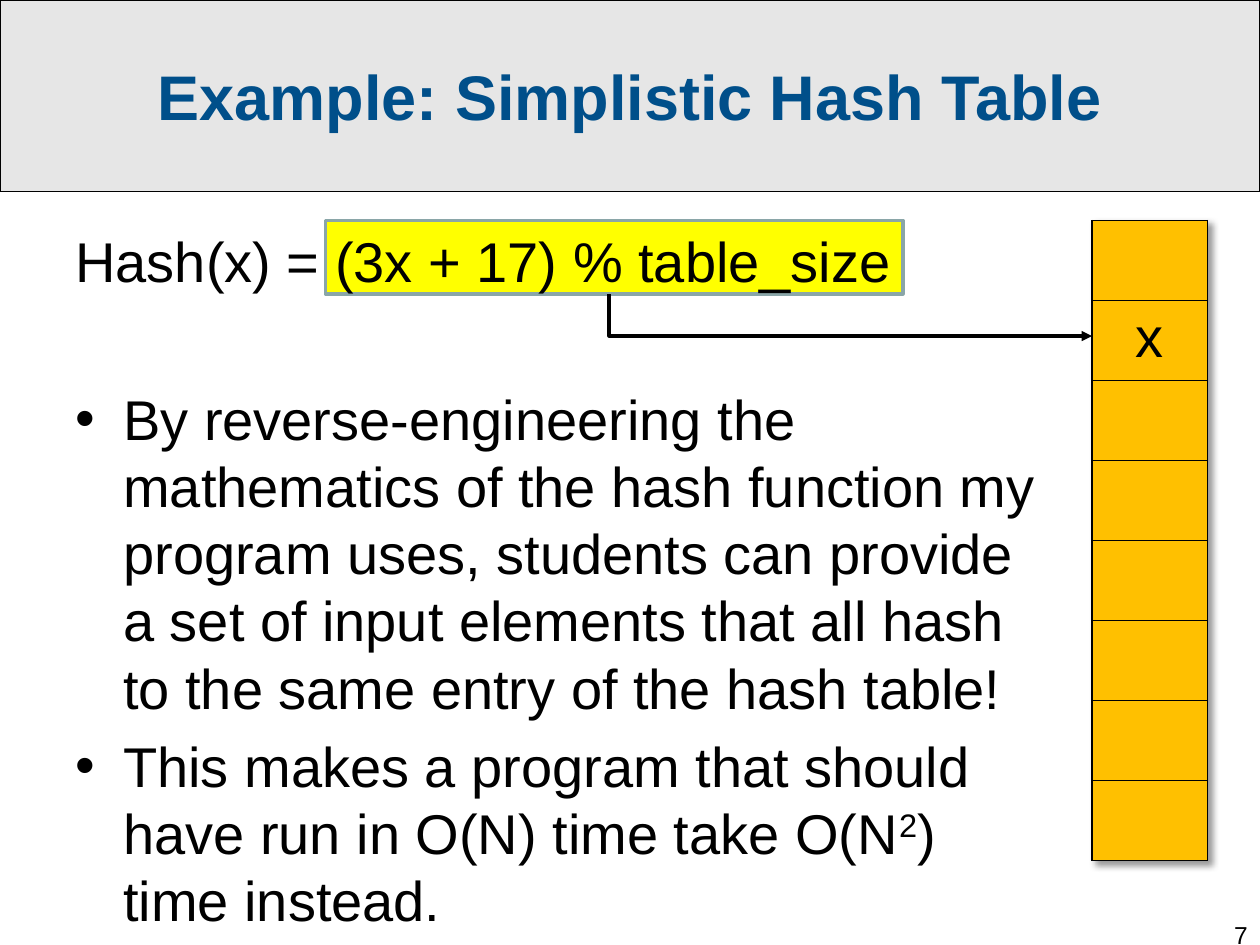
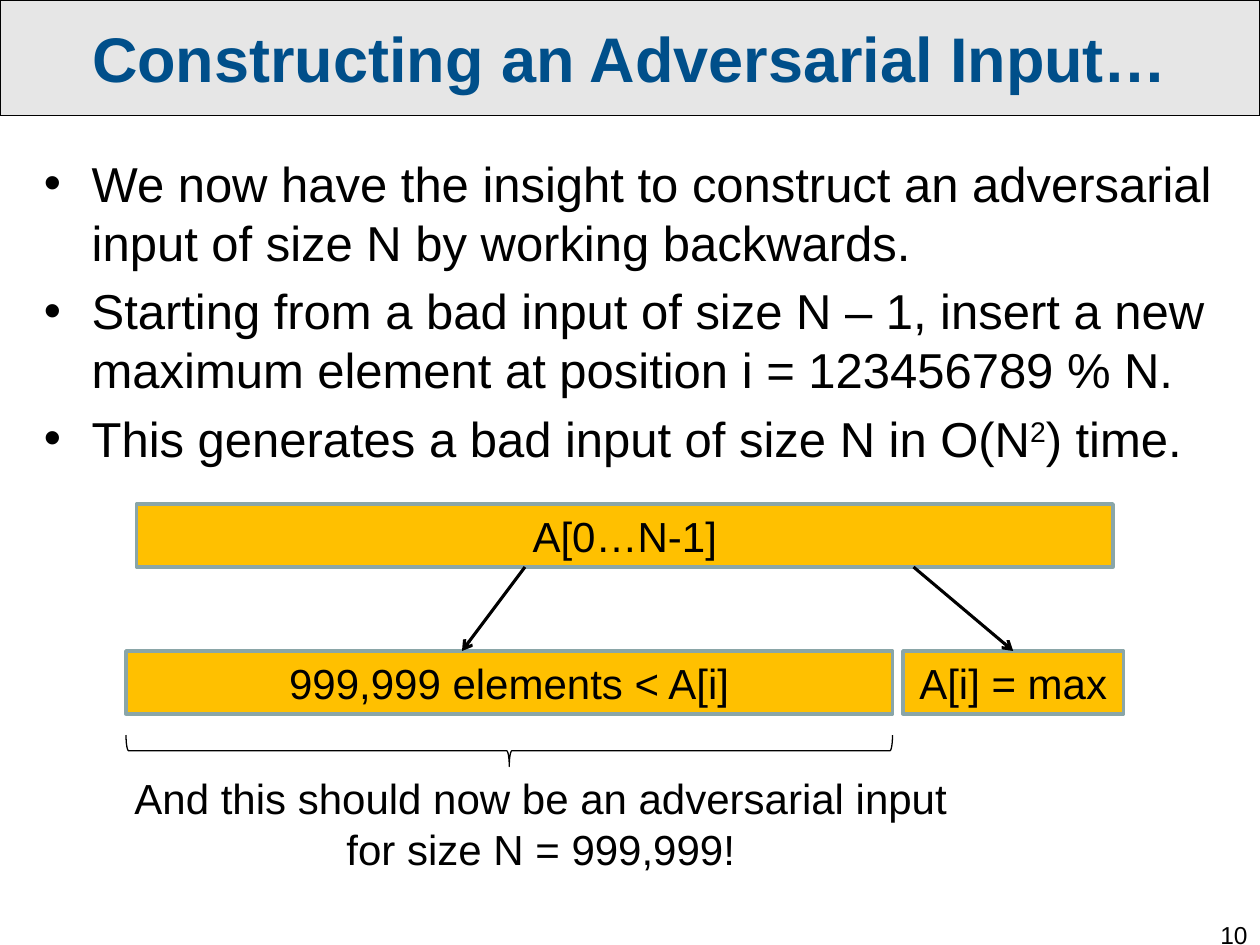
from dataclasses import dataclass

from lxml.etree import SubElement
from pptx import Presentation
from pptx.dml.color import RGBColor
from pptx.enum.shapes import MSO_CONNECTOR, MSO_SHAPE
from pptx.enum.text import MSO_ANCHOR, PP_ALIGN
from pptx.oxml import parse_xml
from pptx.oxml.ns import nsdecls, qn
from pptx.util import Inches, Pt

COLS, ROWS = 120, 90
WIDTH, HEIGHT = Inches(10), Inches(7.5)


@dataclass(frozen=True)
class Theme:
    font: str = "Arial"
    ink: str = "000000"
    title: str = "004F8A"
    band: str = "E6E6E6"
    cell: str = "FFC000"
    mark: str = "FFFF00"
    edge: str = "8AA6A8"
    head: int = 36
    large: int = 32
    body: int = 28
    label: int = 24
    small: int = 14
    thin: float = 0.75
    rule: float = 1
    arrow: float = 1.75
    frame: float = 2
    indent: float = 0.38


THEME = Theme()


def grid(*spans):
    """Turn columns and rows, in turn, into lengths."""
    return [int(span * (HEIGHT / ROWS if i % 2 else WIDTH / COLS))
            for i, span in enumerate(spans)]


def colour(code):
    return RGBColor.from_string(code)


def write(frame, *lines, size, ink=THEME.ink, bold=False, align=PP_ALIGN.LEFT,
          anchor=MSO_ANCHOR.TOP, wrap=True, before=0, bullet=False):
    """Set one paragraph per line; text between two ^ is raised."""
    frame.word_wrap = wrap
    frame.vertical_anchor = anchor
    for i, line in enumerate(lines):
        para = frame.add_paragraph() if i else frame.paragraphs[0]
        para.alignment = align
        para.space_before = Pt(before * size)
        if bullet:
            props = para._p.get_or_add_pPr()
            props.set("marL", str(Inches(THEME.indent)))
            props.set("indent", str(-Inches(THEME.indent)))
            SubElement(props, qn("a:buFont"), typeface=THEME.font)
            SubElement(props, qn("a:buChar"), char="•")
        for j, part in enumerate(line.split("^")):
            run = para.add_run()
            run.text = part
            font = run.font
            font.name, font.size, font.bold = THEME.font, Pt(size), bold
            font.color.rgb = colour(ink)
            if j % 2:
                run._r.get_or_add_rPr().set("baseline", "30000")


def label(slide, spot, *lines, **style):
    write(slide.shapes.add_textbox(*grid(*spot)).text_frame, *lines, **style)


def paint(shape, fill, line, width):
    if fill:
        shape.fill.solid()
        shape.fill.fore_color.rgb = colour(fill)
    else:
        shape.fill.background()
    shape.line.color.rgb = colour(line)
    shape.line.width = Pt(width)


def box(slide, spot, text="", fill=THEME.cell):
    shape = slide.shapes.add_shape(MSO_SHAPE.RECTANGLE, *grid(*spot))
    shape.shadow.inherit = False
    paint(shape, fill, THEME.edge, THEME.frame)
    if text:
        write(shape.text_frame, text, size=THEME.label,
              align=PP_ALIGN.CENTER, anchor=MSO_ANCHOR.MIDDLE)


def brace(slide, left, top, width, depth):
    """Draw a brace that opens upward, by turning a right brace."""
    spot = (left + (width - depth) / 2, top - (width - depth) / 2, depth, width)
    shape = slide.shapes.add_shape(MSO_SHAPE.RIGHT_BRACE, *grid(*spot))
    shape.rotation = 90
    shape.shadow.inherit = False
    paint(shape, None, THEME.ink, THEME.thin)


def arrow(slide, start, end, tip="arrow", bent=False):
    kind = MSO_CONNECTOR.ELBOW if bent else MSO_CONNECTOR.STRAIGHT
    link = slide.shapes.add_connector(kind, *grid(*start, *end))
    link.line.color.rgb = colour(THEME.ink)
    link.line.width = Pt(THEME.arrow)
    props = link._element.spPr
    SubElement(props.find(qn("a:ln")), qn("a:tailEnd"), type=tip)
    SubElement(props, qn("a:effectLst"))
    if bent:
        guides = props.find(qn("a:prstGeom")).get_or_add_avLst()
        SubElement(guides, qn("a:gd"), name="adj1", fmla="val 0")


def border(cell):
    props = cell._tc.get_or_add_tcPr()
    for i, side in enumerate(("lnL", "lnR", "lnT", "lnB")):
        props.insert(i, parse_xml(
            f'<a:{side} {nsdecls("a")} w="{Pt(THEME.rule)}"><a:solidFill>'
            f'<a:srgbClr val="{THEME.ink}"/></a:solidFill></a:{side}>'))


def slots(slide, spot, texts):
    """Draw a one-column table with a soft shadow."""
    table = slide.shapes.add_table(len(texts), 1, *grid(*spot)).table
    table.first_row = table.horz_banding = False
    table._tbl.tblPr.insert(0, parse_xml(
        f'<a:effectLst {nsdecls("a")}><a:outerShdw blurRad="50800" dist="38100" '
        'dir="2700000" algn="tl" rotWithShape="0"><a:srgbClr val="000000">'
        '<a:alpha val="40000"/></a:srgbClr></a:outerShdw></a:effectLst>'))
    for i, text in enumerate(texts):
        cell = table.cell(i, 0)
        cell.fill.solid()
        cell.fill.fore_color.rgb = colour(THEME.cell)
        border(cell)
        if text:
            write(cell.text_frame, text, size=THEME.large, align=PP_ALIGN.CENTER)


def page(deck, title, number, depth):
    """Add a slide with its title band and page number."""
    slide = deck.slides.add_slide(deck.slide_layouts[5])
    band = slide.shapes.title
    band.left, band.top, band.width, band.height = grid(0, 0, COLS, depth)
    paint(band, THEME.band, THEME.ink, THEME.thin)
    write(band.text_frame, title, size=THEME.head, ink=THEME.title, bold=True,
          align=PP_ALIGN.CENTER, anchor=MSO_ANCHOR.MIDDLE, wrap=False)
    label(slide, (92, 87, 28, 3), str(number), size=THEME.small,
          align=PP_ALIGN.RIGHT)
    return slide


def simple(deck):
    slide = page(deck, "Example: Simplistic Hash Table", 7, 18.25)
    top = 21
    box(slide, (31, top, 55, 7), fill=THEME.mark)
    label(slide, (6, top, 95, 8), "Hash(x) = (3x + 17) % table_size",
          size=THEME.large, before=0.2)
    label(slide, (6, top + 15, 95, 54),
          "By reverse-engineering the mathematics of the hash function my "
          "program uses, students can provide a set of input elements that "
          "all hash to the same entry of the hash table!",
          "This makes a program that should have run in O(N) time take "
          "O(N^2^) time instead.",
          size=THEME.large, before=0.2, bullet=True)
    slots(slide, (104, top, 11, 61), ["", "x"] + [""] * 6)
    arrow(slide, (58, top + 7), (104, top + 11), tip="triangle", bent=True)


def worst(deck):
    slide = page(deck, "Constructing an Adversarial Input…", 10, 11)
    label(slide, (3, 14, 115, 33),
          "We now have the insight to construct an adversarial input of "
          "size N by working backwards.",
          "Starting from a bad input of size N – 1, insert a new maximum "
          "element at position i = 123456789 % N.",
          "This generates a bad input of size N in O(N^2^) time.",
          size=THEME.body, before=0.2, bullet=True)
    whole, parts, tall = 48, 62, 6
    left, wide = 12, 73
    box(slide, (13, whole, 93, tall), "A[0…N-1]")
    box(slide, (86, parts, 21, tall), "A[i] = max")
    box(slide, (left, parts, wide, tall), "999,999 elements < A[i]")
    for start, end in ((50, 44), (87, 96.5)):
        arrow(slide, (start, whole + tall), (end, parts))
    brace(slide, left, parts + 8, wide, 3)
    label(slide, (11, 73, 81, 11),
          "And this should now be an adversarial input for size N = 999,999!",
          size=THEME.label, align=PP_ALIGN.CENTER)


def main():
    deck = Presentation()
    deck.slide_width, deck.slide_height = WIDTH, HEIGHT
    simple(deck)
    worst(deck)
    deck.save("out.pptx")


if __name__ == "__main__":
    main()
